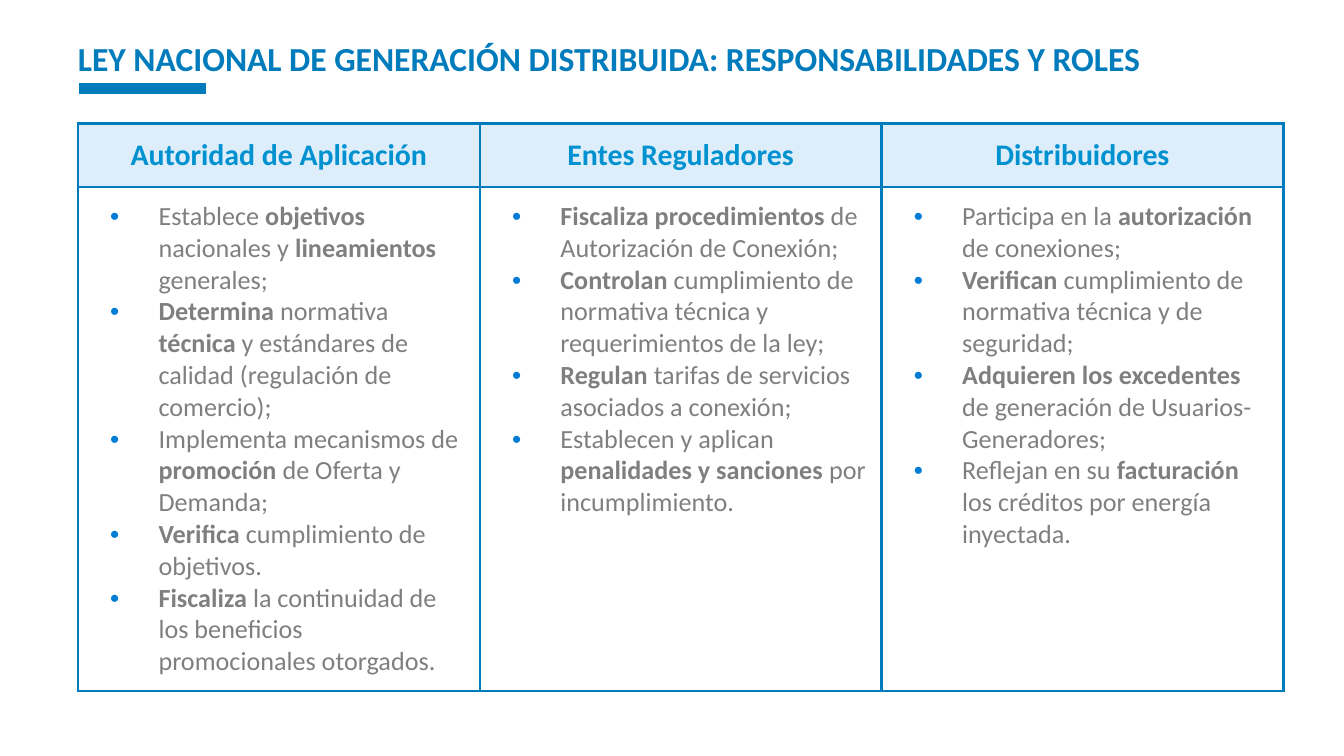
from lxml import etree
from pptx import Presentation, util as u
from pptx.dml.color import RGBColor
from pptx.enum import shapes, text
from pptx.oxml.ns import qn

BLUE = RGBColor(0x00, 0x7B, 0xBB)
HEADING_BLUE = RGBColor(0x00, 0x91, 0xD0)
BULLET_BLUE = RGBColor(0x00, 0x7C, 0xD4)
PALE_BLUE = RGBColor(0xDD, 0xED, 0xF9)
GRAY = RGBColor(0x7F, 0x7F, 0x7F)

TITLE_FORMAT = {"name": "Calibri", "size": u.Pt(18), "bold": True}
HEADING_FORMAT = {"name": "Calibri", "size": u.Pt(16), "bold": True}
DUTY_FORMAT = {"name": "Calibri", "size": u.Pt(14)}

ROLES = {
    "Autoridad de Aplicación": [
        "Establece **objetivos **nacionales y** lineamientos** generales;",
        "**Determina **normativa **técnica **y estándares de calidad (regulación de comercio);",
        "Implementa mecanismos de **promoción **de Oferta y Demanda;",
        "**Verifica** cumplimiento de objetivos.",
        "**Fiscaliza** la continuidad de los beneficios promocionales otorgados.",
    ],
    "Entes Reguladores": [
        "**Fiscaliza procedimientos** de Autorización de Conexión;",
        "**Controlan** cumplimiento de normativa técnica y requerimientos de la ley;",
        "**Regulan** tarifas de servicios asociados a conexión;",
        "Establecen y aplican **penalidades y sanciones** por incumplimiento.",
    ],
    "Distribuidores": [
        "Participa en la **autorización **de conexiones;",
        "**Verifican** cumplimiento de normativa técnica y de seguridad;",
        "**Adquieren los excedentes **de generación de Usuarios-Generadores;",
        "Reflejan en su **facturación** los créditos por energía inyectada.",
    ],
}


def add_run(paragraph, wording, color, formats):
    run = paragraph.add_run()
    run.text = wording
    run.font.color.rgb = color
    for attribute, value in formats.items():
        setattr(run.font, attribute, value)


def add_borders(cell):
    properties = cell._tc.get_or_add_tcPr()
    for position, side in enumerate(("lnL", "lnR", "lnT", "lnB")):
        border = etree.Element(qn(f"a:{side}"), w=str(u.Pt(1.5)))
        fill = etree.SubElement(border, qn("a:solidFill"))
        etree.SubElement(fill, qn("a:srgbClr"), val=str(BLUE))
        properties.insert(position, border)


prs = Presentation()
prs.slide_width = u.Inches(10)
prs.slide_height = u.Inches(10) * 9 // 16
slide = prs.slides.add_slide(prs.slide_layouts[5])

title = slide.shapes.title
title.left, title.top = u.Inches(0.51), u.Inches(0.21)
title.width, title.height = u.Inches(8.5), u.Inches(0.71)
title_frame = title.text_frame
for attribute, value in {
    "margin_left": u.Inches(0.07),
    "margin_right": u.Inches(0.07),
    "margin_top": u.Inches(0.07),
    "margin_bottom": u.Inches(0.07),
    "vertical_anchor": text.MSO_ANCHOR.TOP,
    "auto_size": text.MSO_AUTO_SIZE.NONE,
    "word_wrap": True,
}.items():
    setattr(title_frame, attribute, value)
title_frame.paragraphs[0].alignment = text.PP_ALIGN.LEFT
add_run(
    title_frame.paragraphs[0],
    "LEY NACIONAL DE GENERACIÓN DISTRIBUIDA: RESPONSABILIDADES Y ROLES",
    BLUE,
    TITLE_FORMAT,
)

underline = slide.shapes.add_connector(
    shapes.MSO_CONNECTOR.STRAIGHT,
    u.Inches(0.59), u.Inches(0.66), u.Inches(1.53), u.Inches(0.66),
)
underline.line.color.rgb = BLUE
underline.line.width = u.Pt(6)
etree.SubElement(underline._element.spPr, qn("a:effectLst"))

roles_frame = slide.shapes.add_table(
    2, len(ROLES), u.Inches(0.58), u.Inches(0.92), u.Inches(8.97), u.Inches(4.17)
)
roles_table = roles_frame.table
roles_table.rows[0].height = u.Inches(0.45)
roles_table.rows[1].height = u.Inches(3.1)
roles_frame.height = u.Inches(4.17)

for column, (role, duties) in enumerate(ROLES.items()):
    heading_cell = roles_table.cell(0, column)
    duties_cell = roles_table.cell(1, column)
    for cell in (heading_cell, duties_cell):
        for side in ("left", "right", "top", "bottom"):
            setattr(cell, f"margin_{side}", u.Inches(0.1))
        cell.fill.background()
        add_borders(cell)

    heading_cell.fill.solid()
    heading_cell.fill.fore_color.rgb = PALE_BLUE
    heading = heading_cell.text_frame.paragraphs[0]
    heading.alignment = text.PP_ALIGN.CENTER
    add_run(heading, role, HEADING_BLUE, HEADING_FORMAT)

    duties_frame = duties_cell.text_frame
    for index, duty in enumerate(duties):
        paragraph = duties_frame.add_paragraph() if index else duties_frame.paragraphs[0]
        properties = paragraph._p.get_or_add_pPr()
        properties.set("marL", str(u.Inches(0.5)))
        properties.set("indent", str(u.Inches(-0.36)))
        bullet_color = etree.SubElement(properties, qn("a:buClr"))
        etree.SubElement(bullet_color, qn("a:srgbClr"), val=str(BULLET_BLUE))
        etree.SubElement(properties, qn("a:buFont"), typeface="Arial")
        etree.SubElement(properties, qn("a:buChar"), char="•")
        for part, wording in enumerate(duty.split("**")):
            if wording:
                add_run(paragraph, wording, GRAY, {**DUTY_FORMAT, "bold": part % 2 == 1})

prs.save("out.pptx")
